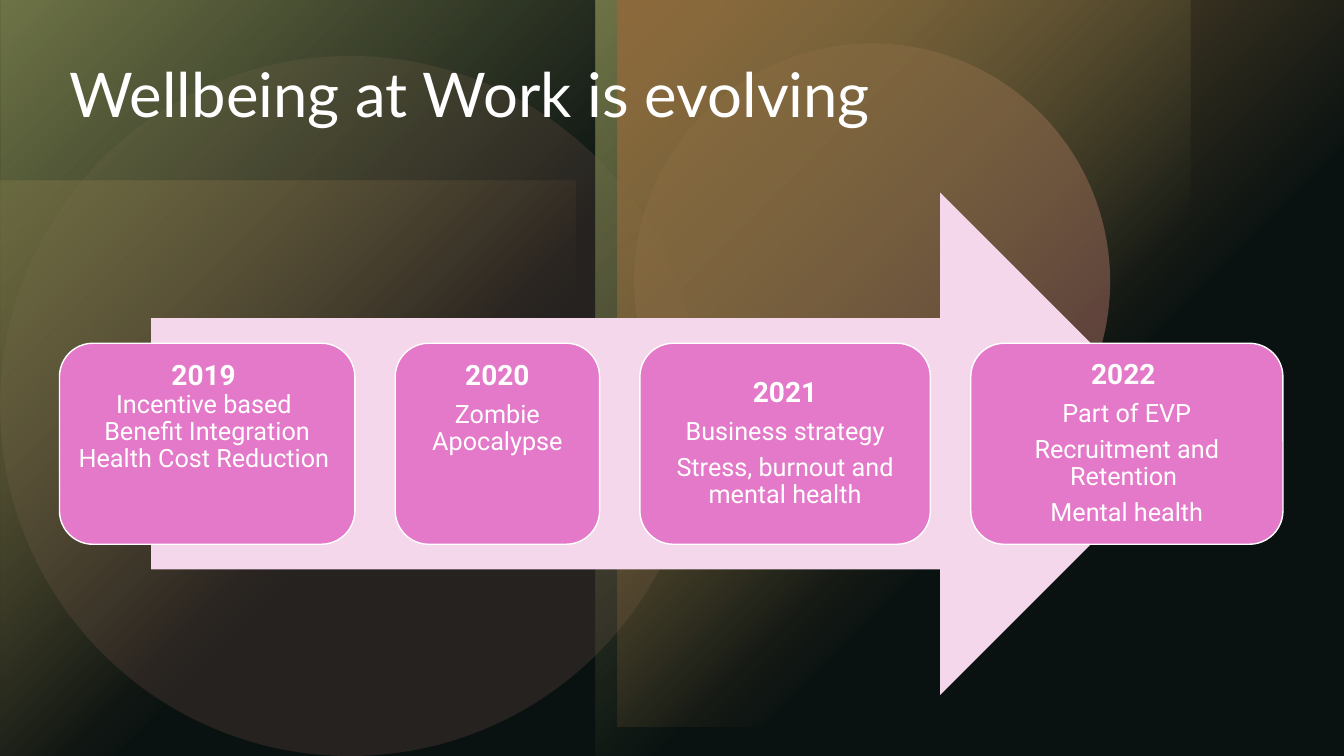
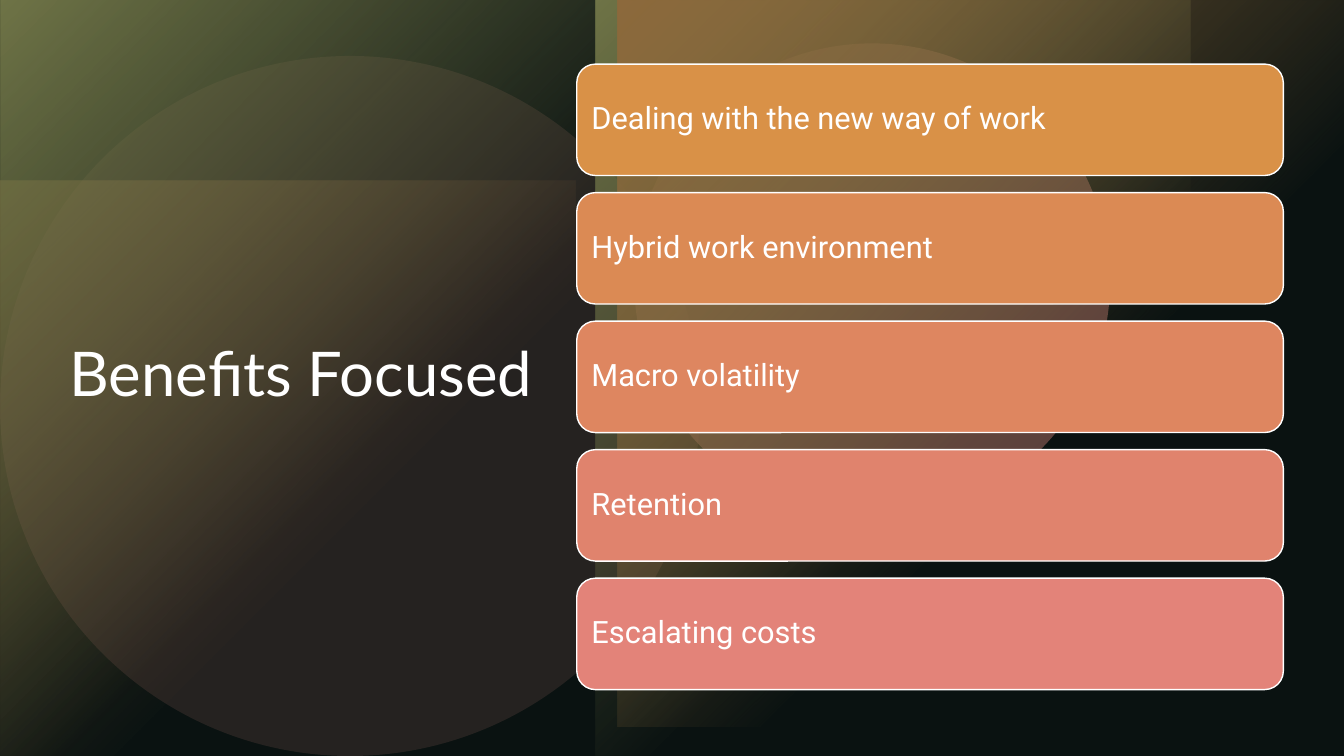
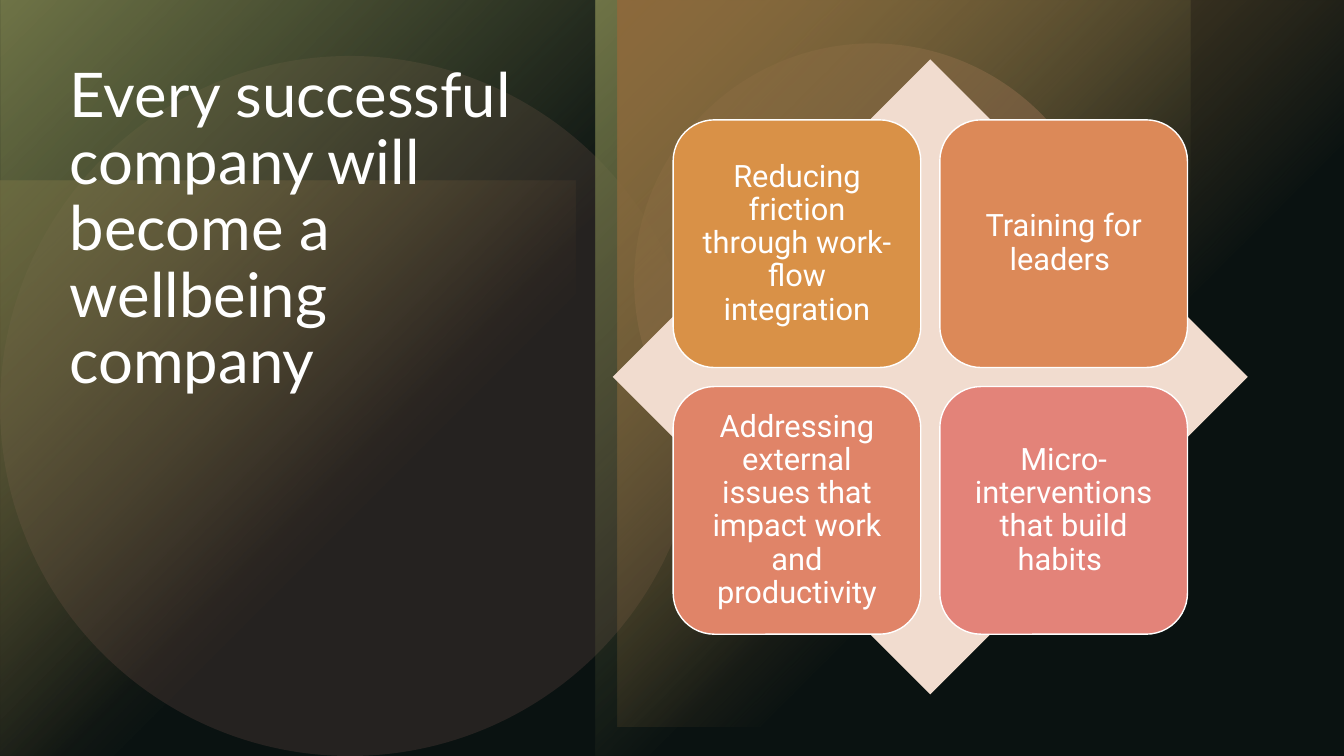
from pptx import Presentation
from pptx.dml.color import RGBColor
from pptx.enum.shapes import MSO_SHAPE
from pptx.enum.text import MSO_ANCHOR, MSO_AUTO_SIZE, PP_ALIGN
from pptx.oxml import parse_xml
from pptx.oxml.ns import nsdecls
from pptx.util import Pt

BLACK = RGBColor(0x00, 0x00, 0x00)
WHITE = RGBColor(0xFF, 0xFF, 0xFF)
VEIL = RGBColor(0x1B, 0x2F, 0x2C)
OLIVE = RGBColor(0xA7, 0xA2, 0x59)
ORANGE = RGBColor(0xD9, 0x91, 0x47)
APRICOT = RGBColor(0xDB, 0x8A, 0x54)
TANGERINE = RGBColor(0xDC, 0x89, 0x58)
SALMON = RGBColor(0xDE, 0x86, 0x60)
CORAL = RGBColor(0xE0, 0x84, 0x68)
BLUSH = RGBColor(0xE0, 0x83, 0x6D)
ROSE = RGBColor(0xE3, 0x83, 0x79)
PINK = RGBColor(0xE3, 0x79, 0xC8)
PALE_PINK = RGBColor(0xF4, 0xD7, 0xEB)
PALE_PEACH = RGBColor(0xF1, 0xDC, 0xCF)

SLIDE_WIDTH, SLIDE_HEIGHT = 960, 540
MARGIN = 42.5
SIDE_TITLE = (MARGIN, MARGIN, 354, 453.6)
TOP_TITLE = (MARGIN, MARGIN, 874, 142.5)


def apply(target, values):
    for name, value in values.items():
        setattr(target, name, value)


class Deck:
    title_font = {"name": "Lato", "size": Pt(44), "bold": False}
    body_font = {"name": "Roboto"}

    def __init__(self):
        self.presentation = Presentation()
        apply(self.presentation, {"slide_width": Pt(SLIDE_WIDTH), "slide_height": Pt(SLIDE_HEIGHT)})
        self.layout = self.presentation.slide_layouts[5]
        backdrop = self.presentation.slide_master.background.fill
        backdrop.solid()
        backdrop.fore_color.rgb = BLACK
        self.slide = None

    def add_slide(self, title, box, anchor=MSO_ANCHOR.TOP):
        self.slide = self.presentation.slides.add_slide(self.layout)
        if len(self.presentation.slides) == 1:
            self.add_scenery()
        heading = self.slide.shapes.title
        apply(heading, dict(zip(("left", "top", "width", "height"), map(Pt, box))))
        apply(heading.text_frame, {
            "text": title, "word_wrap": True,
            "auto_size": MSO_AUTO_SIZE.NONE, "vertical_anchor": anchor,
        })
        paragraph = heading.text_frame.paragraphs[0]
        apply(paragraph, {"alignment": PP_ALIGN.LEFT, "line_spacing": 0.9})
        self.style_run(paragraph.runs[0], self.title_font)

    def add_scenery(self):
        glow_left = self.gradient((0, 129.4, 410.8, 410.8), ORANGE, 60)
        disc_right = self.shape(MSO_SHAPE.OVAL, (453, 31, 340, 340), ROSE, 60)
        disc_left = self.shape(MSO_SHAPE.OVAL, (0, 40, 500, 500), ROSE, 20)
        panel_left = self.gradient((0, 0, 425.3, 540), OLIVE, rotation=180)
        panel_right = self.gradient((425.3, 0, 425.3, 540), OLIVE, rotation=180, mirrored=True)
        glow_right = self.gradient((441, 0, 519, 519), ORANGE, rotation=180)
        veil = self.shape(MSO_SHAPE.RECTANGLE, (0, 0, SLIDE_WIDTH, SLIDE_HEIGHT), VEIL, 40)
        scenery = (glow_left, disc_right, disc_left, panel_left, panel_right, glow_right, veil)
        for position, piece in enumerate(scenery):
            element = piece._element
            element.nvSpPr.cNvPr.set("id", str(100 + position))
            self.layout.shapes._spTree.insert(2 + position, element)

    def shape(self, preset, box, color, opacity=100):
        shape = self.slide.shapes.add_shape(preset, *map(Pt, box))
        shape.shadow.inherit = False
        shape.fill.solid()
        shape.fill.fore_color.rgb = color
        shape.line.fill.background()
        if opacity < 100:
            tint = shape._element.spPr.find(".//{*}srgbClr")
            tint.append(parse_xml(f'<a:alpha {nsdecls("a")} val="{opacity * 1000}"/>'))
        return shape

    def gradient(self, box, color, opacity=100, rotation=0, mirrored=False):
        panel = self.shape(MSO_SHAPE.RECTANGLE, box, color)
        panel.rotation = rotation
        properties = panel._element.spPr
        properties.xfrm.set("flipV", "1")
        if mirrored:
            properties.xfrm.set("flipH", "1")
        stops = "".join(
            f'<a:gs pos="{place * 1000}"><a:srgbClr val="{color}">'
            f'<a:alpha val="{alpha * 1000}"/></a:srgbClr></a:gs>'
            for place, alpha in ((0, opacity), (60, 0))
        )
        blend = parse_xml(
            f'<a:gradFill {nsdecls("a")}><a:gsLst>{stops}</a:gsLst>'
            '<a:path path="circle"><a:fillToRect r="100000" b="100000"/></a:path>'
            '<a:tileRect l="-100000" t="-100000"/></a:gradFill>'
        )
        properties.replace(properties.find("{*}solidFill"), blend)
        return panel

    def style_run(self, run, values):
        apply(run.font, values)
        run.font.color.rgb = WHITE

    def card(self, box, color, paragraphs, size=22, heading_size=None,
             align=PP_ALIGN.CENTER, anchor=MSO_ANCHOR.MIDDLE):
        card = self.shape(MSO_SHAPE.ROUNDED_RECTANGLE, box, color)
        card.line.color.rgb = WHITE
        card.line.width = Pt(1)
        inset = Pt(0.3 * (heading_size or size))
        frame = card.text_frame
        apply(frame, {
            "word_wrap": True, "vertical_anchor": anchor,
            "margin_left": inset, "margin_right": inset,
            "margin_top": inset, "margin_bottom": inset,
        })
        is_heading = heading_size is not None
        for position, lines in enumerate(paragraphs):
            paragraph = frame.add_paragraph() if position else frame.paragraphs[0]
            first_size = heading_size if is_heading else size
            apply(paragraph, {
                "alignment": align, "line_spacing": 0.9, "space_after": Pt(0.35 * first_size),
            })
            for number, line in enumerate(lines.split("\n")):
                if number:
                    paragraph.add_line_break()
                run = paragraph.add_run()
                run.text = line
                self.style_run(run, {
                    **self.body_font, "bold": is_heading,
                    "size": Pt(heading_size if is_heading else size),
                })
                is_heading = False


def build_timeline(deck):
    deck.add_slide("Wellbeing at Work is evolving", TOP_TITLE)
    deck.shape(MSO_SHAPE.RIGHT_ARROW, (108, 137.5, 743, 359), PALE_PINK)
    years = (
        (211, MSO_ANCHOR.TOP,
         ["2019 \nIncentive based \nBenefit Integration\nHealth Cost Reduction "]),
        (146, MSO_ANCHOR.TOP, ["2020", "Zombie Apocalypse"]),
        (207.5, MSO_ANCHOR.MIDDLE,
         ["2021", "Business strategy", "Stress, burnout and mental health"]),
        (223, MSO_ANCHOR.MIDDLE,
         ["2022 ", "Part of EVP", "Recruitment and Retention ", "Mental health"]),
    )
    left, gap = MARGIN, 28.8
    for width, anchor, paragraphs in years:
        deck.card((left, 245.2, width, 143.6), PINK, paragraphs,
                  size=18, heading_size=20, anchor=anchor)
        left += width + gap


def build_benefits(deck):
    deck.add_slide("Benefits Focused", SIDE_TITLE, MSO_ANCHOR.MIDDLE)
    benefits = (
        ("Dealing with the new way of work", ORANGE),
        ("Hybrid work environment", APRICOT),
        ("Macro volatility", SALMON),
        ("Retention", BLUSH),
        ("Escalating costs", ROSE),
    )
    for row, (benefit, color) in enumerate(benefits):
        deck.card((412, 45.8 + 91.8 * row, 504.7, 79.6), color, [benefit], align=PP_ALIGN.LEFT)


def build_company(deck):
    deck.add_slide("Every successful company will become a wellbeing company", SIDE_TITLE)
    deck.shape(MSO_SHAPE.DIAMOND, (437.7, MARGIN, 453.6, 453.6), PALE_PEACH)
    actions = (
        ("Reducing friction through work-flow integration", ORANGE),
        ("Training for leaders ", TANGERINE),
        ("Addressing external issues that impact work and productivity", CORAL),
        ("Micro-interventions that build habits ", ROSE),
    )
    side, pitch = 176.9, 190.5
    for position, (action, color) in enumerate(actions):
        row, column = divmod(position, 2)
        deck.card((480.8 + pitch * column, 85.6 + pitch * row, side, side), color, [action])


def main():
    deck = Deck()
    build_timeline(deck)
    build_benefits(deck)
    build_company(deck)
    deck.presentation.save("out.pptx")


if __name__ == "__main__":
    main()
